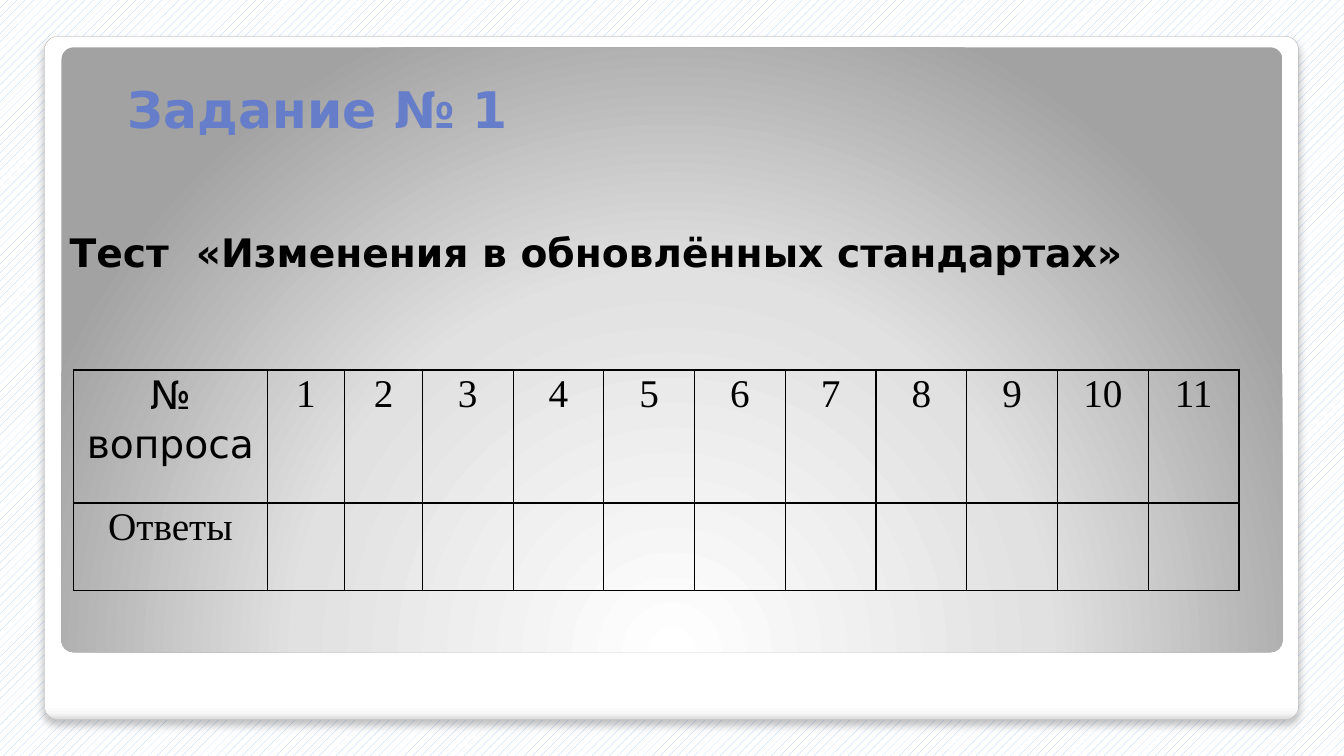
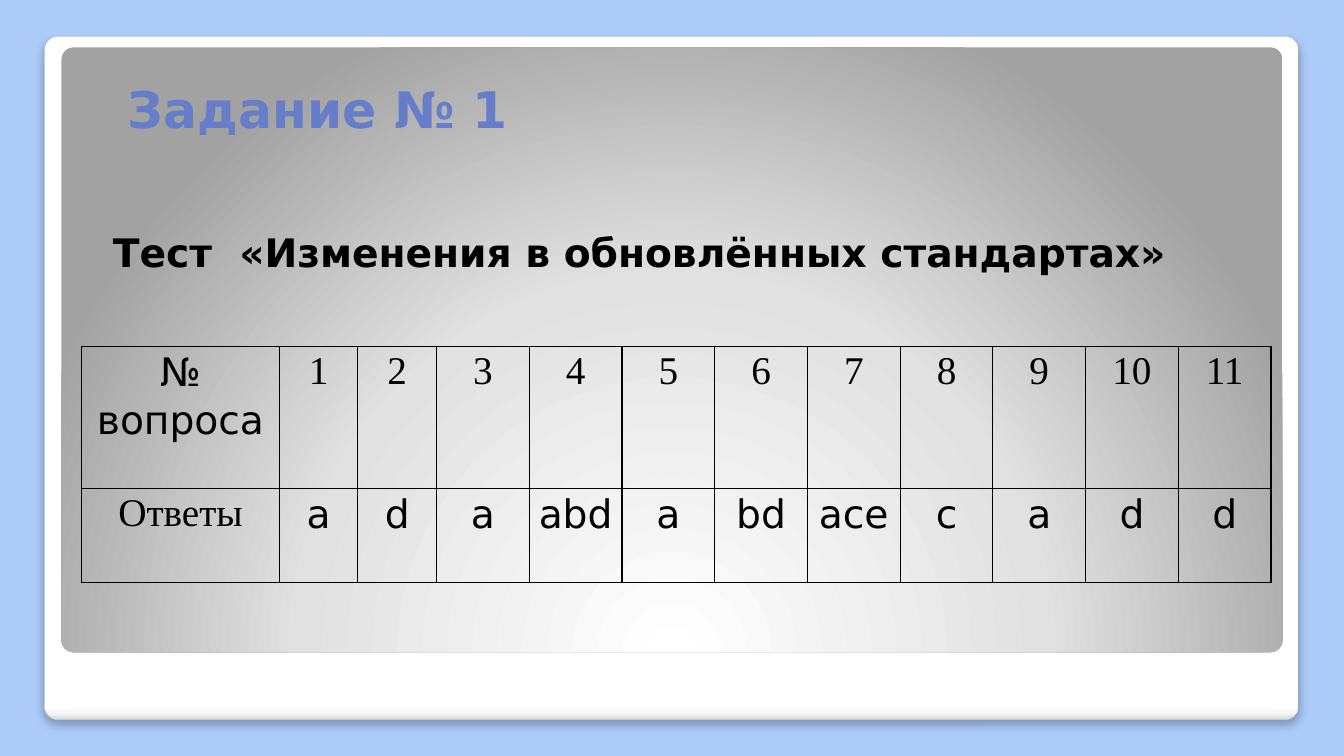
from dataclasses import dataclass
from typing import Optional

from lxml.etree import SubElement
from pptx import Presentation
from pptx.dml.color import RGBColor
from pptx.enum.dml import MSO_PATTERN
from pptx.enum.shapes import MSO_SHAPE
from pptx.enum.text import MSO_ANCHOR, PP_ALIGN
from pptx.oxml import parse_xml
from pptx.oxml.ns import nsdecls, qn
from pptx.util import Pt

SCALE = 9144  # EMU per px, 100 px to the inch


@dataclass(frozen=True)
class Theme:
    sans: str = "DejaVu Sans"
    serif: str = "Times New Roman"
    sky: str = "ACCBF9"
    white: str = "FFFFFF"
    black: str = "000000"
    title: str = "667DC9"
    edge: str = "A4A4A4"
    head: int = 36
    text: int = 28
    lead: float = 1.07
    after: int = 8


THEME = Theme()


@dataclass(frozen=True)
class Box:
    left: int
    top: int
    width: int
    height: int

    def emu(self) -> tuple[int, ...]:
        return tuple(px(n) for n in (self.left, self.top, self.width, self.height))


@dataclass(frozen=True)
class Panel:
    box: Box
    stops: tuple[tuple[int, str], ...]
    shade: str
    edge: Optional[str] = None


@dataclass(frozen=True)
class Grid:
    left: int
    top: int
    label: int
    small: int
    wide: int
    rows: tuple[int, int]
    answers: tuple[str, ...]


@dataclass(frozen=True)
class Task:
    hatch: bool
    body: Box
    grid: Grid


COUNT = 11
NARROW = 2
HEAD = Box(117, 25, 1150, 117)
PANELS = (
    Panel(
        Box(44, 36, 1244, 678),
        ((0, THEME.white), (98, THEME.white), (99, "F7F7F7"), (100, "DADADA")),
        '<a:lin ang="5400000" scaled="0"/>',
        THEME.edge,
    ),
    Panel(
        Box(61, 47, 1211, 600),
        ((0, THEME.white), (55, "E1E1E1"), (100, "A2A2A2")),
        '<a:path path="circle"><a:fillToRect l="50000" t="175000" '
        'r="50000" b="-75000"/></a:path>',
    ),
)
TASKS = (
    Task(True, Box(49, 213, 1242, 70),
         Grid(73, 367, 192, 77, 90, (132, 87), ("",) * COUNT)),
    Task(False, Box(92, 213, 1183, 70),
         Grid(81, 344, 196, 78, 92, (141, 93),
              ("a", "d", "a", "abd", "a", "bd", "ace", "c", "a", "d", "d"))),
)


def px(count: int) -> int:
    return count * SCALE


def rgb(code: str) -> RGBColor:
    return RGBColor.from_string(code)


def style(para, size: int, face: str, color: str, bold: bool = False) -> None:
    font = para.font
    font.size, font.name, font.bold = Pt(size), face, bold
    font.color.rgb = rgb(color)


def paint(slide, hatch: bool) -> None:
    fill = slide.background.fill
    if hatch:
        fill.patterned()
        fill.pattern = MSO_PATTERN.PERCENT_20
        fill.fore_color.rgb = rgb(THEME.sky)
        fill.back_color.rgb = rgb(THEME.white)
    else:
        fill.solid()
        fill.fore_color.rgb = rgb(THEME.sky)


def shade(props, panel: Panel) -> None:
    """Replace the empty fill of a shape with the panel's gradient."""
    stops = "".join(
        f'<a:gs pos="{pos * 1000}"><a:srgbClr val="{code}"/></a:gs>'
        for pos, code in panel.stops
    )
    fill = parse_xml(
        f'<a:gradFill {nsdecls("a")} rotWithShape="1">'
        f"<a:gsLst>{stops}</a:gsLst>{panel.shade}</a:gradFill>"
    )
    props.replace(props.find(qn("a:noFill")), fill)


def cast(props) -> None:
    """Add a soft shadow that falls straight down."""
    drop = SubElement(
        props.find(qn("a:effectLst")), qn("a:outerShdw"),
        blurRad=str(Pt(6)), dist=str(Pt(4)), dir="5400000",
        algn="t", rotWithShape="0",
    )
    color = SubElement(drop, qn("a:srgbClr"), val=THEME.black)
    SubElement(color, qn("a:alpha"), val="25000")


def plate(slide, panel: Panel) -> None:
    shape = slide.shapes.add_shape(MSO_SHAPE.ROUNDED_RECTANGLE, *panel.box.emu())
    shape.adjustments[0] = 0.02
    shape.shadow.inherit = False
    shape.fill.background()
    props = shape._element.spPr
    shade(props, panel)
    if panel.edge:
        shape.line.color.rgb = rgb(panel.edge)
        shape.line.width = Pt(0.16)
        cast(props)
    else:
        shape.line.fill.background()


def label(slide, box: Box, text: str, size: int, color: str,
          inset: tuple[int, int], anchor: MSO_ANCHOR, lead: float = 1.0) -> None:
    frame = slide.shapes.add_textbox(*box.emu()).text_frame
    frame.word_wrap = True
    frame.vertical_anchor = anchor
    frame.margin_left, frame.margin_top = px(inset[0]), px(inset[1])
    para = frame.paragraphs[0]
    para.text = text
    para.line_spacing = lead
    style(para, size, THEME.sans, color, bold=True)


def frame(cell) -> None:
    """Clear a cell's fill and draw its four borders."""
    cell.fill.background()
    props = cell._tc.get_or_add_tcPr()
    for spot, side in enumerate(("lnL", "lnR", "lnT", "lnB")):
        props.insert(spot, parse_xml(
            f'<a:{side} {nsdecls("a")} w="{Pt(1)}"><a:solidFill>'
            f'<a:srgbClr val="{THEME.black}"/></a:solidFill></a:{side}>'
        ))


def write(cell, text: str, face: str) -> None:
    cell.margin_left = cell.margin_right = px(7)
    cell.margin_top = cell.margin_bottom = 0
    para = cell.text_frame.paragraphs[0]
    para.text = text
    para.alignment = PP_ALIGN.CENTER
    para.line_spacing = THEME.lead
    para.space_after = Pt(THEME.after)
    style(para, THEME.text, face, THEME.black)


def tabulate(slide, grid: Grid) -> None:
    cols = [grid.label] + [grid.small] * NARROW + [grid.wide] * (COUNT - NARROW)
    rows = (
        ("№ вопроса", *(str(n + 1) for n in range(COUNT))),
        ("Ответы", *grid.answers),
    )
    box = Box(grid.left, grid.top, sum(cols), sum(grid.rows))
    table = slide.shapes.add_table(len(rows), len(cols), *box.emu()).table
    table.first_row = table.horz_banding = False
    for col, width in zip(table.columns, cols):
        col.width = px(width)
    for row, height, texts in zip(table.rows, grid.rows, rows):
        row.height = px(height)
        for cell, text in zip(row.cells, texts):
            frame(cell)
            write(cell, text, THEME.sans if text.islower() else THEME.serif)


def build(deck, task: Task) -> None:
    slide = deck.slides.add_slide(deck.slide_layouts[6])
    paint(slide, task.hatch)
    for panel in PANELS:
        plate(slide, panel)
    label(slide, HEAD, "Задание № 1", THEME.head, THEME.title,
          (10, 5), MSO_ANCHOR.BOTTOM)
    label(slide, task.body, "Тест  «Изменения в обновлённых стандартах»",
          THEME.text, THEME.black, (20, 10), MSO_ANCHOR.TOP, THEME.lead)
    tabulate(slide, task.grid)


def main() -> None:
    deck = Presentation()
    deck.slide_width, deck.slide_height = px(1333), px(750)
    for task in TASKS:
        build(deck, task)
    deck.save("out.pptx")


if __name__ == "__main__":
    main()
